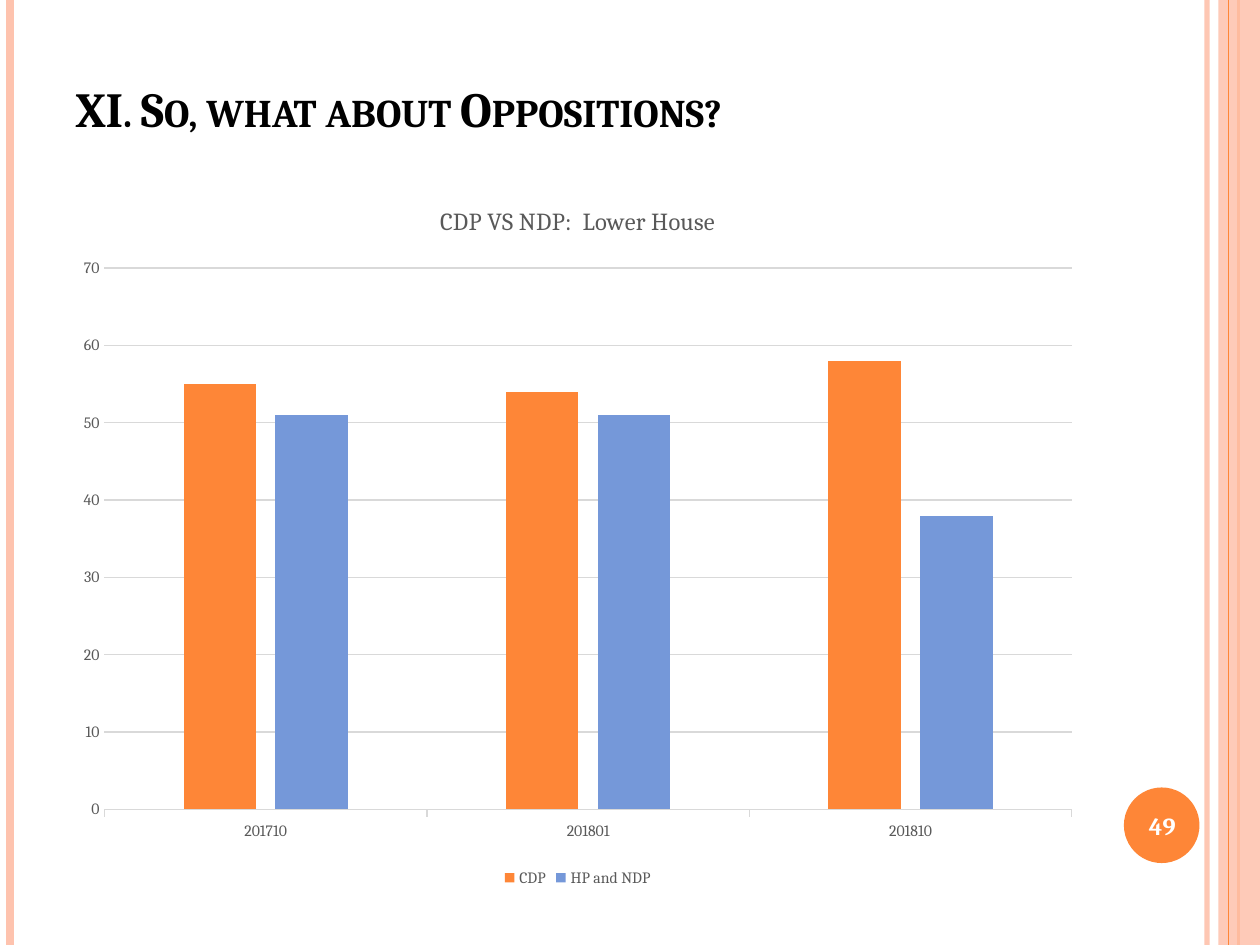
from lxml import etree
from pptx import Presentation, util as u
from pptx.chart.data import CategoryChartData
from pptx.dml.color import RGBColor
from pptx.enum import chart as ch, shapes, text
from pptx.oxml.ns import qn

# Content
TITLE = "XI. So, what about Oppositions?"
PAGE_NUMBER = "49"
CHART_TITLE = "CDP VS NDP:  Lower House"
MONTHS = ["201710", "201801", "201810"]
SEATS = [("CDP", (55, 54, 58), "FE8637"), ("HP and NDP", (51, 51, 38), "7598D9")]

# Style and layout, in inches
WIDTH, HEIGHT = 10, 7.5
LEFT, CONTENT_WIDTH = 0.5, 8.17
FONT, ORANGE, PEACH, GREY, RULE = "Cambria", "FE8637", "FEC3AE", "595959", "D9D9D9"
# Stripes: x, colour, line width in points, opacity in percent
STRIPES_BEHIND = [(9.58, PEACH, 3, 93), (0.08, PEACH, 4.5, 100), (9.83, ORANGE, 1.5, 100)]
STRIPES_FRONT = [(9.75, ORANGE, 0.75, 100)]
BAND_LEFT, BAND_OPACITY = 9.67, 87


def rgb(value):
    return RGBColor.from_string(value)


def box(*lengths):
    return [u.Inches(length) for length in lengths]


def style(font, size, color, bold=False):
    font.name, font.size, font.bold = FONT, u.Pt(size), bold
    font.color.rgb = rgb(color)


def set_opacity(element, percent):
    color = next(element.iter(qn("a:srgbClr")))
    etree.SubElement(color, qn("a:alpha")).set("val", str(percent * 1000))


def add_stripe(slide, x, color, width, opacity):
    stripe = slide.shapes.add_connector(
        shapes.MSO_CONNECTOR.STRAIGHT, *box(x, 0, x, HEIGHT))
    stripe.line.color.rgb = rgb(color)
    stripe.line.width = u.Pt(width)
    properties = stripe._element.spPr
    if opacity < 100:
        set_opacity(properties, opacity)
    etree.SubElement(properties, qn("a:effectLst"))


def add_filled(slide, kind, place, color):
    filled = slide.shapes.add_shape(kind, *box(*place))
    filled.shadow.inherit = False
    filled.fill.solid()
    filled.fill.fore_color.rgb = rgb(color)
    filled.line.fill.background()
    return filled


def add_seat_chart(slide):
    data = CategoryChartData()
    data.categories = MONTHS
    for name, values, _ in SEATS:
        data.add_series(name, values)
    chart = slide.shapes.add_chart(
        ch.XL_CHART_TYPE.COLUMN_CLUSTERED,
        *box(LEFT, 1.43, CONTENT_WIDTH, 5.65), data).chart
    style(chart.font, 10, "000000")

    chart.has_title = True
    chart.chart_title.text_frame.text = CHART_TITLE
    style(chart.chart_title.text_frame.paragraphs[0].runs[0].font, 14, GREY)
    chart.chart_title.include_in_layout = False

    chart.has_legend = True
    chart.legend.position = ch.XL_LEGEND_POSITION.BOTTOM
    chart.legend.include_in_layout = False
    style(chart.legend.font, 9, GREY)

    plot = chart.plots[0]
    plot.gap_width, plot.overlap, plot.vary_by_categories = 219, -27, False
    for series, (_, _, color) in zip(plot.series, SEATS):
        series.format.fill.solid()
        series.format.fill.fore_color.rgb = rgb(color)

    months, seats = chart.category_axis, chart.value_axis
    for axis in (months, seats):
        style(axis.tick_labels.font, 9, GREY)
    months.major_tick_mark = ch.XL_TICK_MARK.OUTSIDE
    seats.major_tick_mark = ch.XL_TICK_MARK.NONE
    seats.minimum_scale, seats.maximum_scale, seats.major_unit = 0, 70, 10
    seats.format.line.fill.background()
    seats.has_major_gridlines = True
    for line in (months.format.line, seats.major_gridlines.format.line):
        line.color.rgb = rgb(RULE)
        line.width = u.Pt(0.75)


def main():
    deck = Presentation()
    deck.slide_width, deck.slide_height = box(WIDTH, HEIGHT)
    slide = deck.slides.add_slide(deck.slide_layouts[5])

    # Side stripes and band
    for stripe in STRIPES_BEHIND:
        add_stripe(slide, *stripe)
    band = add_filled(slide, shapes.MSO_SHAPE.RECTANGLE,
                      (BAND_LEFT, 0, WIDTH - BAND_LEFT, HEIGHT), PEACH)
    set_opacity(band._element.spPr, BAND_OPACITY)
    for stripe in STRIPES_FRONT:
        add_stripe(slide, *stripe)

    # Title
    title = slide.shapes.title
    title.left, title.top, title.width, title.height = box(LEFT, 0.3, CONTENT_WIDTH, 0.84)
    title.text_frame.text = TITLE
    title.text_frame.vertical_anchor = text.MSO_ANCHOR.BOTTOM
    heading = title.text_frame.paragraphs[0]
    heading.alignment = text.PP_ALIGN.LEFT
    style(heading.runs[0].font, 28, "000000", bold=True)
    heading.runs[0]._r.get_or_add_rPr().set("cap", "small")

    # Page number on its disc
    add_filled(slide, shapes.MSO_SHAPE.OVAL, (8.92, 6.25, 0.6, 0.6), ORANGE)
    number = slide.shapes.add_textbox(*box(8.89, 6.27, 0.67, 0.57)).text_frame
    number.word_wrap = True
    number.vertical_anchor = text.MSO_ANCHOR.MIDDLE
    number.text = PAGE_NUMBER
    number.paragraphs[0].alignment = text.PP_ALIGN.CENTER
    style(number.paragraphs[0].runs[0].font, 14, "FFFFFF", bold=True)

    add_seat_chart(slide)
    deck.save("out.pptx")


if __name__ == "__main__":
    main()
